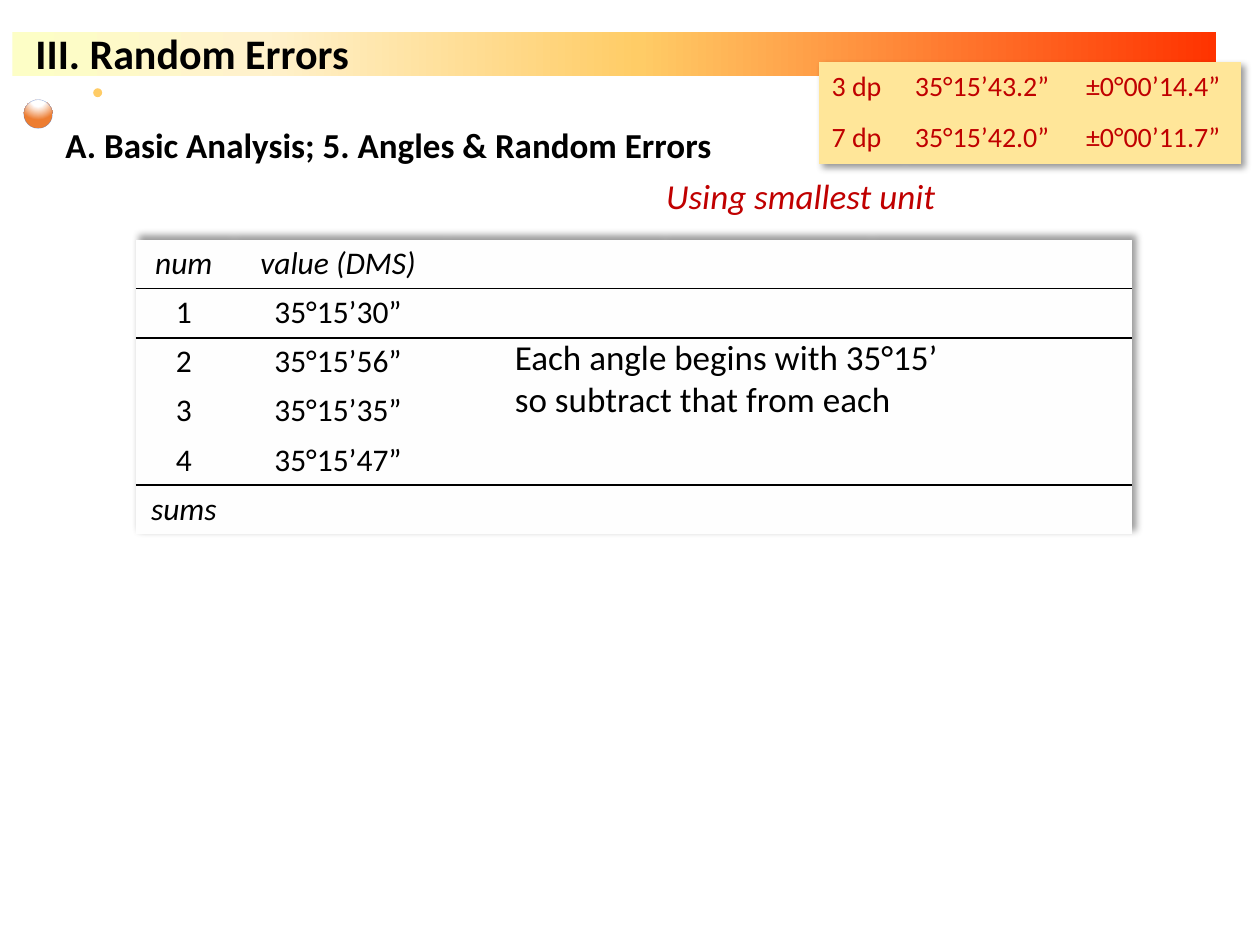
"""Build the slide on angles and random errors."""
from lxml import etree
from pptx import Presentation
from pptx.dml.color import RGBColor
from pptx.enum import shapes, text
from pptx.oxml import parse_xml
from pptx.oxml.ns import qn
from pptx.util import Cm, Pt

NS = 'xmlns:a="http://schemas.openxmlformats.org/drawingml/2006/main"'
PLAIN = "{2D5ABB26-0587-4C30-8999-92F81FD0307C}"
FONT = "Calibri"
HUE = {"ink": "000000", "red": "C00000", "sand": "FFE699", "paper": "FEFEFE",
       "gold": "FFCC66", "white": "FFFFFF", "ball": "ED7D31", "rim": "3B6BC1"}
BAR = [(0, "FDFEC6"), (21, "FFF2CC"), (52, "FFCC66"), (100, "FF3300")]
BALL = [(0, HUE["white"]), (35, HUE["white"]), (100, HUE["ball"])]
LINEAR = '<a:lin ang="0" scaled="0"/>'
RADIAL = ('<a:path path="circle"><a:fillToRect l="50000" t="-80000" '
          'r="50000" b="180000"/></a:path>')

TITLE = "III. Random Errors"
NOTES = [
    ("A. Basic Analysis; 5. Angles & Random Errors", (1.07, 2.46, 21.9, 1.2),
     {"bold": True}, 0.9, True),
    ("Each angle begins with 35°15’ so subtract that from each",
     (10.13, 6.63, 9.12, 1.8), {}, 1, True),
    ("Using smallest unit", (13.18, 3.4, 6, 1.02),
     {"hue": "red", "italic": True}, 1, False),
]
ANGLES = [("num", "value (DMS)"), ("1", "35°15’30”"), ("2", "35°15’56”"),
          ("3", "35°15’35”"), ("4", "35°15’47”"), ("sums",)]
RESULTS = [("3 dp", "35°15’43.2”", "±0°00’14.4”"),
           ("7 dp", "35°15’42.0”", "±0°00’11.7”")]
RULES = (1, 5)


def rgb(name):
    return RGBColor.from_string(HUE[name])


def write(para, words, size=20, hue="ink", bold=False, italic=False):
    run = para.add_run()
    run.text = words
    font = run.font
    font.name, font.size, font.bold, font.italic = FONT, Pt(size), bold, italic
    font.color.rgb = rgb(hue)


def draw(slide, kind, box, hue=None, stops=(), course=""):
    shape = slide.shapes.add_shape(kind, *map(Cm, box))
    shape.shadow.inherit = False
    shape.line.fill.background()
    if hue:
        shape.fill.solid()
        shape.fill.fore_color.rgb = rgb(hue)
    else:
        marks = "".join(f'<a:gs pos="{at * 1000}"><a:srgbClr val="{tone}"/></a:gs>'
                        for at, tone in stops)
        grad = parse_xml(f'<a:gradFill {NS} rotWithShape="1"><a:gsLst>{marks}'
                         f'</a:gsLst>{course}</a:gradFill>')
        shape._element.spPr.find(qn("a:prstGeom")).addnext(grad)
    return shape


def rule(cell, side):
    line = parse_xml(f'<a:{side} {NS} w="12700"><a:solidFill><a:srgbClr '
                     f'val="{HUE["ink"]}"/></a:solidFill></a:{side}>')
    cell._tc.get_or_add_tcPr().insert(0, line)


def grid(slide, rows, spot, widths, height, fill, turn):
    frame = slide.shapes.add_table(len(rows), len(widths), *map(
        Cm, (*spot, sum(widths), height * len(rows))))
    table = frame.table
    table.first_row = table.horz_banding = False
    props = table._tbl.tblPr
    props.find(qn("a:tableStyleId")).text = PLAIN
    props.insert(0, parse_xml(
        f'<a:effectLst {NS}><a:outerShdw blurRad="50800" dist="38100" '
        f'dir="{turn * 60000}" algn="tl" rotWithShape="0"><a:prstClr val="black">'
        f'<a:alpha val="40000"/></a:prstClr></a:outerShdw></a:effectLst>'))
    for col, width in zip(table.columns, widths):
        col.width = Cm(width)
    for row in table.rows:
        row.height = Cm(height)
    for cell in table.iter_cells():
        cell.fill.solid()
        cell.fill.fore_color.rgb = rgb(fill)
    return table


def angles(slide):
    table = grid(slide, ANGLES, (2.74, 4.83), (1.93, 4.29, 4.39, 4.17, 5.31),
                 0.99, "paper", 315)
    for r, row in enumerate(ANGLES):
        for c in range(len(table.columns)):
            cell = table.cell(r, c)
            cell.margin_left = cell.margin_right = Cm(0.1)
            cell.margin_top = cell.margin_bottom = Cm(0.1)
            if r + 1 in RULES:
                rule(cell, "lnB")
            if r in RULES:
                rule(cell, "lnT")
            if c < len(row):
                para = cell.text_frame.paragraphs[0]
                para.alignment = text.PP_ALIGN.CENTER
                write(para, row[c], 18, italic=r in (0, len(ANGLES) - 1))


def results(slide):
    table = grid(slide, RESULTS, (16.51, 1.24), (1.68, 3.45, 3.38),
                 1.03, "sand", 45)
    for r, row in enumerate(RESULTS):
        for c, words in enumerate(row):
            cell = table.cell(r, c)
            cell.vertical_anchor = text.MSO_ANCHOR.MIDDLE
            write(cell.text_frame.paragraphs[0], words, 16, "red")


def header(slide):
    kind = shapes.MSO_SHAPE
    draw(slide, kind.RECTANGLE, (0.25, 0.64, 24.26, 0.89),
         stops=BAR, course=LINEAR)
    title = slide.shapes.title
    slide.shapes._spTree.append(title._element)
    title.left, title.top, title.width, title.height = map(
        Cm, (0.46, 0.43, 18.52, 1.27))
    title.text_frame.vertical_anchor = text.MSO_ANCHOR.TOP
    para = title.text_frame.paragraphs[0]
    para.alignment = text.PP_ALIGN.LEFT
    write(para, TITLE, 24, bold=True)
    ball = draw(slide, kind.OVAL, (0.48, 2.01, 0.58, 0.58),
                stops=BALL, course=RADIAL)
    ball.line.color.rgb = rgb("rim")
    ball.line.width = Pt(0.16)
    tone = ball.line._ln.find(".//" + qn("a:srgbClr"))
    etree.SubElement(tone, qn("a:alpha")).set("val", "60000")
    draw(slide, kind.OVAL, (1.88, 1.78, 0.18, 0.18), "gold")


def notes(slide):
    for words, box, style, gap, wrap in NOTES:
        frame = slide.shapes.add_textbox(*map(Cm, box)).text_frame
        frame.word_wrap = wrap
        para = frame.paragraphs[0]
        para.line_spacing = gap
        write(para, words, **style)


def main():
    deck = Presentation()
    deck.slide_width, deck.slide_height = Cm(25.4), Cm(19.05)
    slide = deck.slides.add_slide(deck.slide_layouts[5])
    header(slide)
    angles(slide)
    notes(slide)
    results(slide)
    deck.save("out.pptx")


if __name__ == "__main__":
    main()
